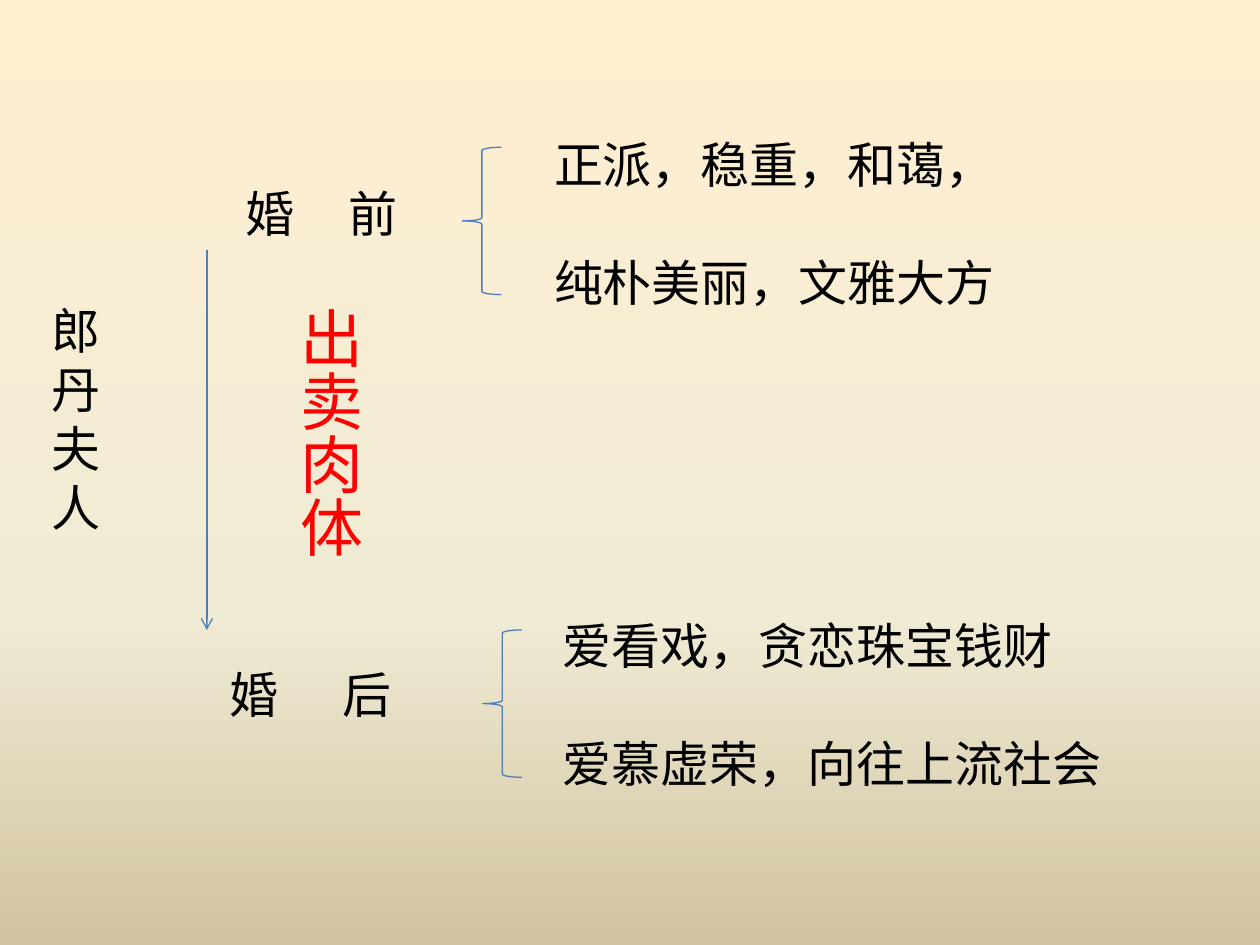
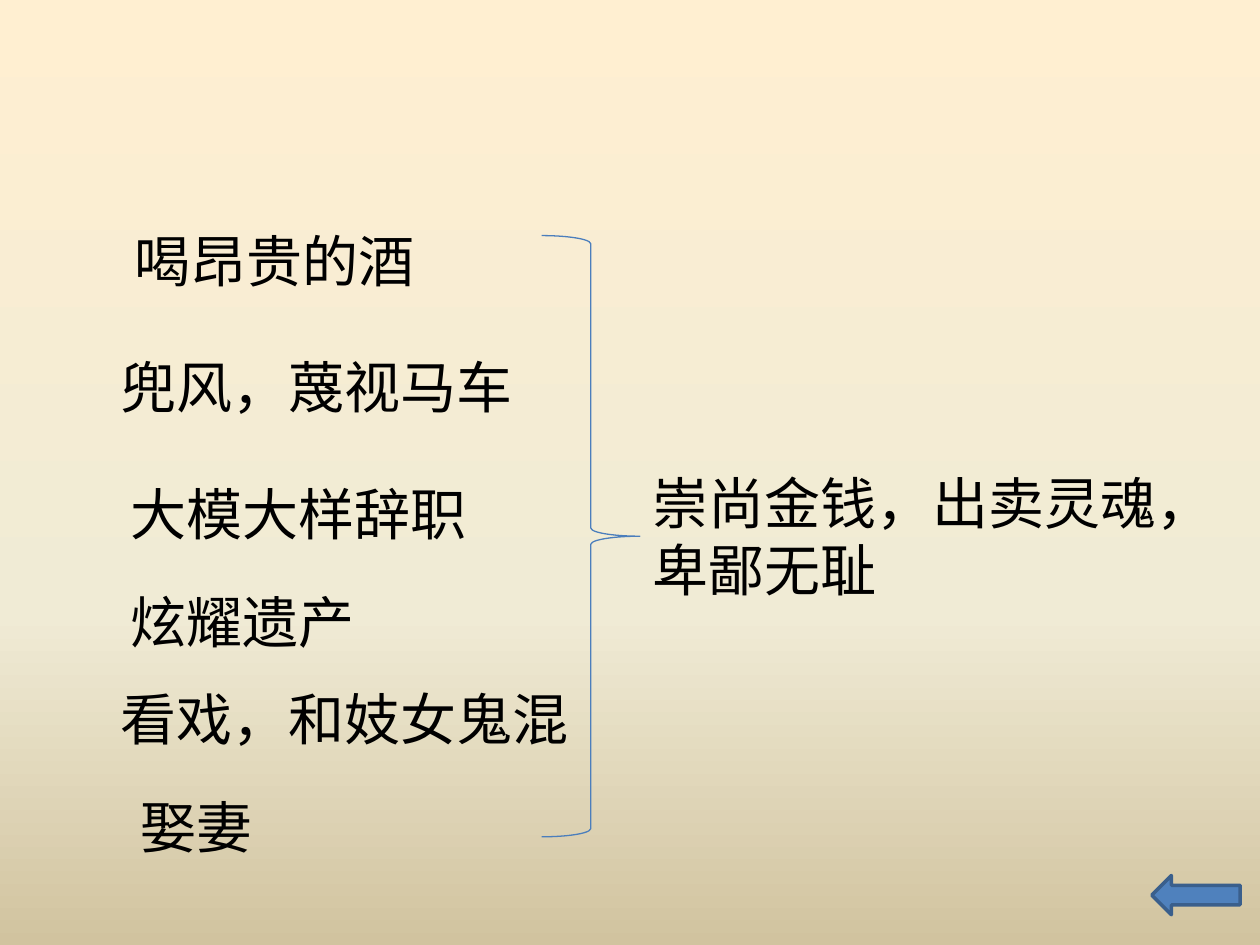
import copy

import pptx
import pptx.dml.color
import pptx.enum.shapes
import pptx.enum.text
import pptx.oxml.ns
import pptx.oxml.xmlchemy
import pptx.util

Cm = pptx.util.Cm
Pt = pptx.util.Pt
SHAPE = pptx.enum.shapes.MSO_SHAPE
FIT = pptx.enum.text.MSO_AUTO_SIZE

FONT = "Calibri"
COLORS = {
    "top": "FFEFD1",
    "middle": "F0EBD5",
    "bottom": "D1C39F",
    "text": "000000",
    "accent": "FF0000",
    "line": "4B7EBC",
    "arrow": "4F81BD",
    "edge": "3A5F8C",
}
STOPS = [("top", 0), ("middle", 0.65), ("bottom", 1)]


def rgb(name):
    """Return the named colour."""
    return pptx.dml.color.RGBColor.from_string(COLORS[name])


def add_node(parent, tag, **attrs):
    """Append a drawing element with the given attributes."""
    node = pptx.oxml.xmlchemy.OxmlElement(tag)
    for key, value in attrs.items():
        node.set(key, str(value))
    parent.append(node)
    return node


def new_slide(deck):
    """Add a blank slide with the shared gradient background."""
    slide = deck.slides.add_slide(deck.slide_layouts[6])
    fill = slide.background.fill
    fill.gradient()
    first = next(slide.element.iter(pptx.oxml.ns.qn("a:gs")))
    first.addnext(copy.deepcopy(first))
    for stop, (name, place) in zip(fill.gradient_stops, STOPS):
        stop.color.rgb = rgb(name)
        stop.position = place
    fill.gradient_angle = 270
    return slide


def add_text(slide, box, lines, size, color="text", wrap=True, fit=True, gap=0):
    """Add a text box with one paragraph per line."""
    shape = slide.shapes.add_textbox(*map(Cm, box))
    frame = shape.text_frame
    frame.word_wrap = wrap
    frame.auto_size = FIT.SHAPE_TO_FIT_TEXT if fit else FIT.NONE
    for index, line in enumerate(lines):
        para = frame.add_paragraph() if index else frame.paragraphs[0]
        if index:
            para.space_before = Pt(gap)
        run = para.add_run()
        run.text = line
        run.font.name = FONT
        run.font.size = Pt(size)
        run.font.color.rgb = rgb(color)
    return frame


def add_stage(slide, box, words, inset, tab):
    """Add a stage label whose two characters are set apart by a tab stop."""
    frame = add_text(slide, box, ["\t".join(words)], 28)
    frame.margin_left = Cm(inset)
    props = frame.paragraphs[0]._p.get_or_add_pPr()
    add_node(add_node(props, "a:tabLst"), "a:tab", pos=int(Cm(tab)), algn="l")


def add_form(slide, kind, box, line="line", width=0.75, fill=None):
    """Add an outlined preset shape, filled if a colour is given."""
    shape = slide.shapes.add_shape(kind, *map(Cm, box))
    shape.shadow.inherit = False
    shape.line.color.rgb = rgb(line)
    shape.line.width = Pt(width)
    if fill:
        shape.fill.solid()
        shape.fill.fore_color.rgb = rgb(fill)
    else:
        shape.fill.background()


def add_arrow(slide, start, end):
    """Add a straight line with an open arrowhead at its end."""
    kind = pptx.enum.shapes.MSO_CONNECTOR.STRAIGHT
    link = slide.shapes.add_connector(kind, *map(Cm, start + end))
    link.line.color.rgb = rgb("line")
    link.line.width = Pt(0.75)
    add_node(link.line._get_or_add_ln(), "a:tailEnd", type="arrow")
    add_node(link._element.spPr, "a:effectLst")


def build_change(deck):
    """Show the wife before and after marriage."""
    slide = new_slide(deck)
    add_text(slide, (0.79, 5.94, 1.6, 5.05), ["郎丹夫人"], 28)
    traits = [
        ((10.92, 2.59, 9.53, 3.84), ["正派，稳重，和蔼，", "纯朴美丽，文雅大方"]),
        ((11.1, 12.29, 11.91, 3.84), ["爱看戏，贪恋珠宝钱财", "爱慕虚荣，向往上流社会"]),
    ]
    for box, lines in traits:
        add_text(slide, box, lines, 28, gap=33.5)
    add_stage(slide, (4.37, 13.28, 4.95, 1.45), "婚后", 0.25, 2.29)
    add_stage(slide, (4.57, 3.58, 3.76, 1.45), "婚前", 0.38, 2.08)
    for left, top in [(9.32, 2.97), (9.73, 12.7)]:
        add_form(slide, SHAPE.LEFT_BRACE, (left, top, 0.79, 2.97))
    frame = add_text(slide, (5.23, 5.94, 2.31, 6.55), ["出卖肉体"], 36, "accent")
    frame._txBody.bodyPr.set("vert", "eaVert")
    add_arrow(slide, (4.17, 5.03), (4.17, 12.7))


def build_deeds(deck):
    """Show the husband's deeds and the verdict on them."""
    slide = new_slide(deck)
    add_text(slide, (2.46, 4.45, 11.43, 1.9), ["喝昂贵的酒"], 32, fit=False)
    deeds = [
        (2.18, 6.99, 8.48, "兜风，蔑视马车"),
        (2.39, 9.55, 7.34, "大模大样辞职"),
        (2.39, 11.71, 5.08, "炫耀遗产"),
        (2.18, 13.67, 9.63, "看戏，和妓女鬼混"),
        (2.59, 15.85, 2.79, "娶妻"),
    ]
    for left, top, width, deed in deeds:
        add_text(slide, (left, top, width, 1.63), [deed], 32, wrap=False)
    add_form(slide, SHAPE.RIGHT_BRACE, (10.92, 4.75, 1.98, 12.12))
    add_text(slide, (12.9, 9.32, 11.51, 3), ["崇尚金钱，出卖灵魂，卑鄙无耻"], 32)
    add_form(slide, SHAPE.LEFT_ARROW, (23.22, 17.65, 1.78, 0.79), "edge", 2, "arrow")


def main():
    """Build and save the deck."""
    deck = pptx.Presentation()
    deck.slide_width, deck.slide_height = Cm(25.4), Cm(19.05)
    build_change(deck)
    build_deeds(deck)
    deck.save("out.pptx")


if __name__ == "__main__":
    main()
